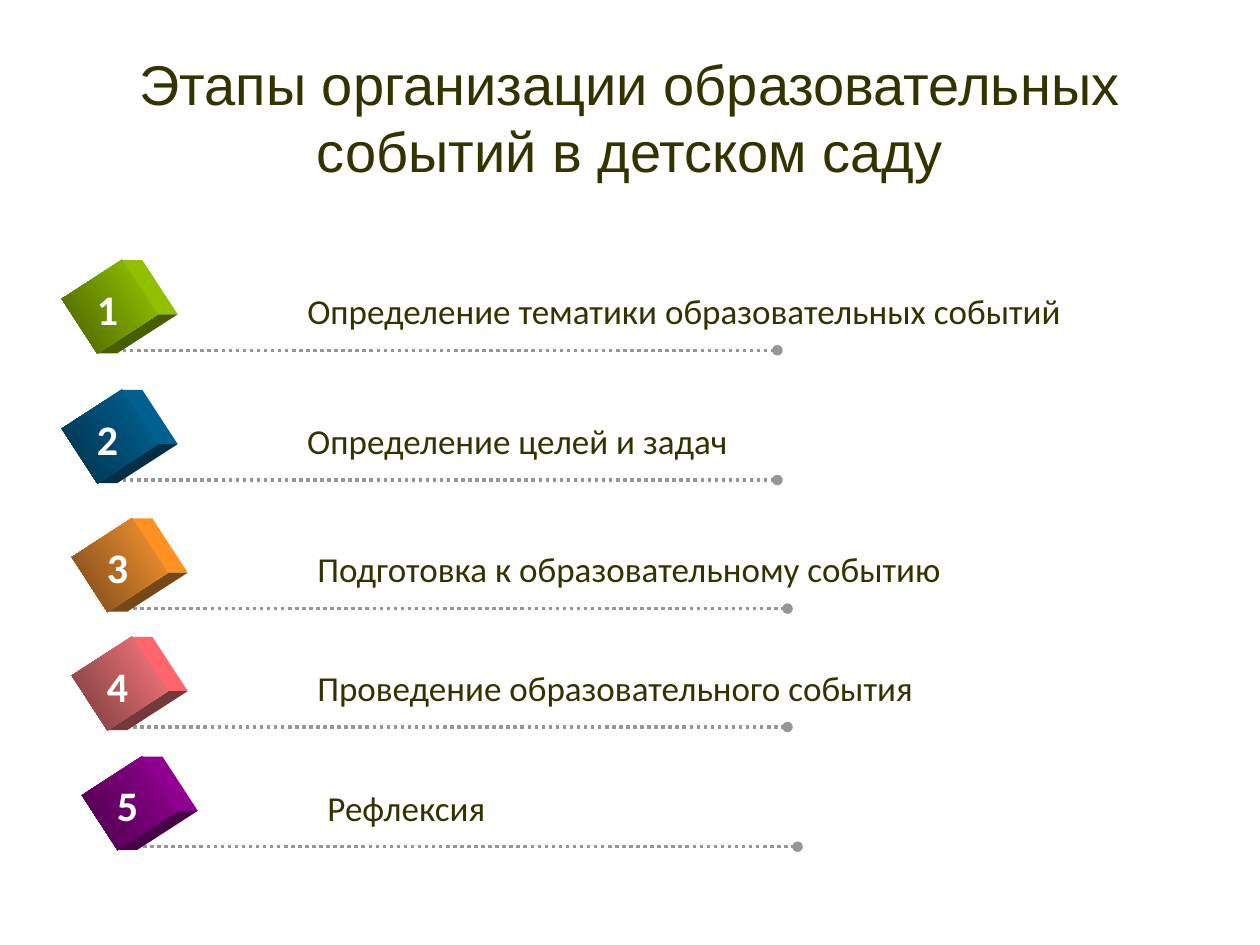
import pptx
import pptx.util
import pptx.dml.color
import pptx.enum.dml
import pptx.enum.shapes
import pptx.enum.text
import pptx.oxml
import pptx.oxml.ns

Inches = pptx.util.Inches
Pt = pptx.util.Pt


def tint(code):
    return pptx.dml.color.RGBColor.from_string(code)


class Deck:
    ink = "333300"
    gray = "969696"
    face = "Calibri"

    def __init__(self):
        self.prs = pptx.Presentation()
        self.prs.slide_width = Inches(10)
        self.prs.slide_height = Inches(7.5)
        self.slide = self.prs.slides.add_slide(self.prs.slide_layouts[5])
        self.pool = self.slide.shapes

    def style(self, para, size, color, face, bold=False):
        for run in para.runs:
            font = run.font
            font.size = Pt(size)
            font.name = face
            font.bold = bold
            font.color.rgb = tint(color)

    def title(self, text):
        box = self.slide.shapes.title
        box.left, box.top = Inches(0.5), Inches(0.3)
        box.width, box.height = Inches(9), Inches(1.25)
        frame = box.text_frame
        frame.text = text
        frame.vertical_anchor = pptx.enum.text.MSO_ANCHOR.MIDDLE
        para = frame.paragraphs[0]
        para.alignment = pptx.enum.text.PP_ALIGN.CENTER
        self.style(para, 32, self.ink, "Arial")

    def group(self):
        self.pool = self.slide.shapes.add_group_shape().shapes

    def text(self, x, y, w, h, words, size, color, bold=False):
        box = self.pool.add_textbox(Inches(x), Inches(y), Inches(w), Inches(h))
        frame = box.text_frame
        frame.text = words
        frame.word_wrap = False
        frame.auto_size = pptx.enum.text.MSO_AUTO_SIZE.SHAPE_TO_FIT_TEXT
        self.style(frame.paragraphs[0], size, color, self.face, bold)

    def rule(self, x, y, w):
        line = self.pool.add_connector(
            pptx.enum.shapes.MSO_CONNECTOR.STRAIGHT,
            Inches(x), Inches(y), Inches(x + w), Inches(y))
        line.line.color.rgb = tint(self.gray)
        line.line.width = Pt(2)
        line.line.dash_style = pptx.enum.dml.MSO_LINE.ROUND_DOT
        # Round end and no shadow
        props = line._element.spPr
        space = pptx.oxml.ns.nsdecls("a")
        props.get_or_add_ln().append(
            pptx.oxml.parse_xml(f'<a:tailEnd {space} type="oval"/>'))
        props.append(pptx.oxml.parse_xml(f"<a:effectLst {space}/>"))

    def side(self, points, color, shade=0):
        spots = [(Inches(x), Inches(y)) for x, y in points]
        pen = self.pool.build_freeform(*spots[0])
        pen.add_line_segments(spots[1:], close=True)
        shape = pen.convert_to_shape()
        shape.shadow.inherit = False
        shape.fill.solid()
        shape.fill.fore_color.rgb = tint(color)
        shape.fill.fore_color.brightness = shade
        shape.line.fill.background()

    def cube(self, x, y, light, dark):
        wide, high, deep = 0.52, 0.57, 0.16
        mx, my = x + wide / 2, y + high / 2
        # Corners of the turned front, measured from its centre
        top, right, low = [(mx + dx, my + dy) for dx, dy in
                           ((0.1, -0.37), (0.38, 0.06), (-0.1, 0.37))]
        for start, end, color, shade in ((top, right, light, -0.06),
                                         (right, low, dark, 0)):
            back = [(px + deep, py) for px, py in (end, start)]
            self.side([start, end] + back, color, shade)
        front = self.pool.add_shape(
            pptx.enum.shapes.MSO_SHAPE.RECTANGLE,
            Inches(x), Inches(y), Inches(wide), Inches(high))
        front.rotation = 57
        front.shadow.inherit = False
        front.line.fill.background()
        front.fill.gradient()
        front.fill.gradient_angle = 270
        for stop, color, place in zip(front.fill.gradient_stops,
                                      (light, dark), (0, 1)):
            stop.color.rgb = tint(color)
            stop.position = place

    def step(self, num, x, y, width, words, light, dark):
        self.group()
        self.rule(x, y, 5.25)
        self.cube(x - 0.31, y - 0.63, light, dark)
        self.text(x + 1.42, y - 0.53, width, 0.43, words, 20, self.ink)
        self.text(x - 0.25, y - 0.58, 0.37, 0.5, str(num), 24, "FFFFFF", True)


def main():
    deck = Deck()
    deck.title("Этапы организации образовательных событий в детском саду")

    # Steps: line start, text width, wording, cube colours
    steps = [
        (0.92, 2.78, 6.72, "Определение тематики образовательных событий",
         "99CC00", "475E00"),
        (0.92, 3.81, 3.84, "Определение целей и задач", "006699", "002F47"),
        (1, 4.83, 5.56, "Подготовка к образовательному событию",
         "FF9933", "764718"),
        (1, 5.77, 5.36, "Проведение образовательного события",
         "FF7C80", "76393B"),
        (1.08, 6.72, 1.65, "Рефлексия", "990099", "470047"),
    ]
    for num, row in enumerate(steps, 1):
        deck.step(num, *row)
    deck.prs.save("out.pptx")


if __name__ == "__main__":
    main()
